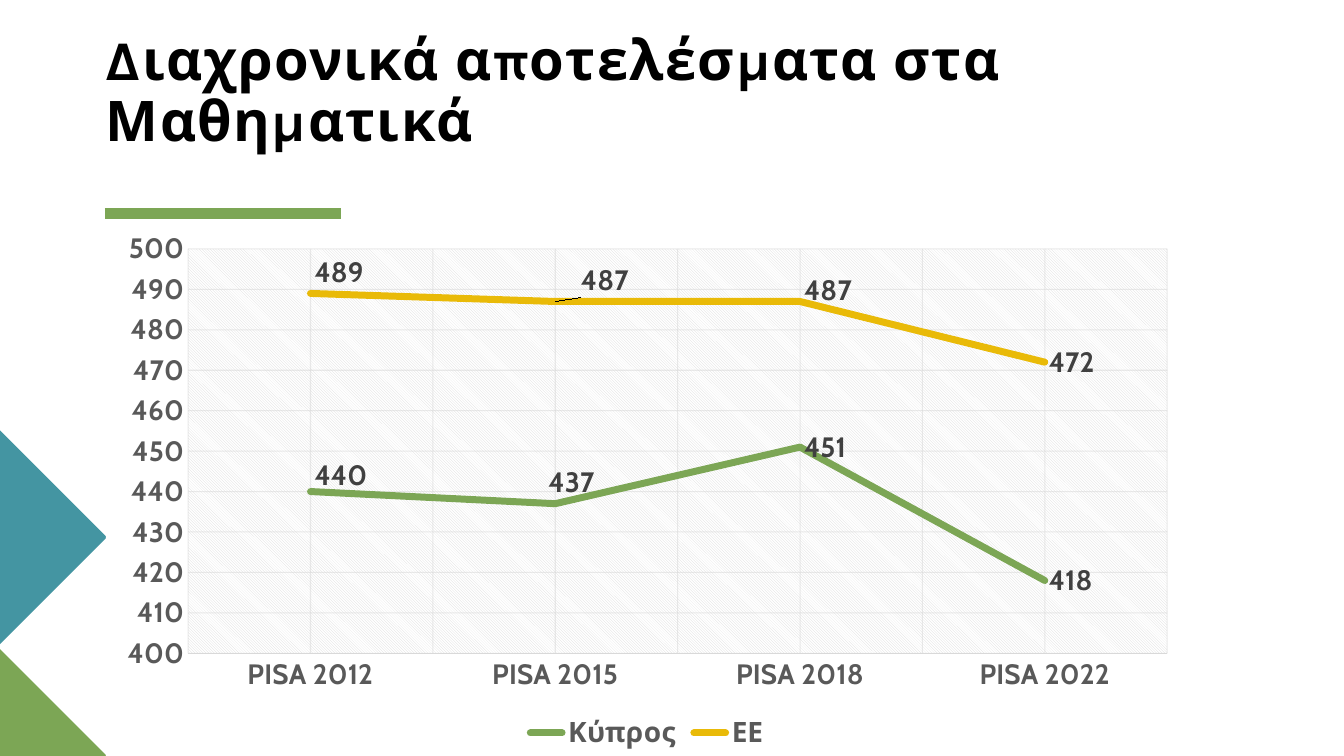
from copy import deepcopy
from dataclasses import dataclass, field

from lxml import etree
from pptx import Presentation
from pptx.chart.data import CategoryChartData
from pptx.dml.color import RGBColor
from pptx.enum.chart import XL_CHART_TYPE, XL_LABEL_POSITION, XL_LEGEND_POSITION, XL_TICK_MARK
from pptx.enum.shapes import MSO_CONNECTOR
from pptx.enum.text import MSO_ANCHOR
from pptx.oxml import parse_xml
from pptx.oxml.ns import nsdecls, qn
from pptx.util import Inches, Pt

GREEN = RGBColor(0x7C, 0xA6, 0x55)
TEAL = RGBColor(0x44, 0x95, 0xA2)
YELLOW = RGBColor(0xE9, 0xBA, 0x08)
BLACK = RGBColor(0, 0, 0)
WHITE = RGBColor(255, 255, 255)
LABEL_GRAY = RGBColor(0x40, 0x40, 0x40)
AXIS_GRAY = RGBColor(0x59, 0x59, 0x59)
GRID_GRAY = RGBColor(0xD9, 0xD9, 0xD9)
WIDTH, HEIGHT = Inches(13.33), Inches(7.5)


@dataclass
class Triangle:
    color: RGBColor
    points: list[tuple[float, float]]


@dataclass
class ScoreLine:
    name: str
    values: list[int]
    color: RGBColor
    # Label shifts by point, as shares of the chart's size
    shifts: dict[int, tuple[float, float]] = field(default_factory=dict)


YEARS = [2012, 2015, 2018, 2022]
SCORES = [
    ScoreLine("Κύπρος", [440, 437, 451, 418], GREEN,
              {0: (0, -0.03), 1: (-0.01, -0.04)}),
    ScoreLine("ΕΕ", [489, 487, 487, 472], YELLOW,
              {0: (0, -0.04), 1: (0.02, -0.04), 2: (0, -0.02)}),
]
# Corners as percentages of the slide's width and height
TRIANGLES = [
    Triangle(GREEN, [(7.95, 100), (0, 100), (0, 85.87)]),
    Triangle(TEAL, [(0, 56.93), (7.95, 71.07), (0, 85.2)]),
]


def x(percent: float) -> int:
    return round(WIDTH * percent / 100)


def y(percent: float) -> int:
    return round(HEIGHT * percent / 100)


def style_font(font, color: RGBColor, size: int = 20, name: str = "Cabin") -> None:
    font.size, font.bold, font.name = Pt(size), True, name
    font.color.rgb = color


def style_line(line, color: RGBColor, width: float) -> None:
    line.color.rgb = color
    line.width = Pt(width)


def draw_triangle(s, triangle: Triangle) -> None:
    first, *rest = [(x(px), y(py)) for px, py in triangle.points]
    builder = s.shapes.build_freeform(*first)
    builder.add_line_segments(rest, close=True)
    sp = builder.convert_to_shape()
    sp.shadow.inherit = False
    sp.fill.solid()
    sp.fill.fore_color.rgb = triangle.color
    sp.line.fill.background()


def draw_title(s, text: str) -> None:
    tf = s.shapes.add_textbox(x(7.88), y(11.33), x(85.6), y(8.93)).text_frame
    tf.word_wrap = True
    tf.vertical_anchor = MSO_ANCHOR.BOTTOM
    tf.margin_left = tf.margin_right = tf.margin_top = tf.margin_bottom = 0
    tf.text = text
    p = tf.paragraphs[0]
    p.line_spacing = 0.9
    r = p.runs[0]
    style_font(r.font, BLACK, 40, "Karla")
    r._r.get_or_add_rPr().set("spc", "100")


def layout_xml(**parts: str | float):
    items = "".join(f'<c:{tag} val="{val}"/>' for tag, val in parts.items())
    return parse_xml(f'<c:layout {nsdecls("c")}><c:manualLayout>{items}'
                     '</c:manualLayout></c:layout>')


def style_axis(axis) -> None:
    axis.major_tick_mark = axis.minor_tick_mark = XL_TICK_MARK.NONE
    style_font(axis.tick_labels.font, AXIS_GRAY)
    axis.has_major_gridlines = True
    style_line(axis.major_gridlines.format.line, GRID_GRAY, 0.75)
    for clr in axis._element.xpath("./c:majorGridlines//a:srgbClr"):
        etree.SubElement(clr, qn("a:alpha")).set("val", "54000")


def add_minor_gridlines(axis) -> None:
    axis.has_minor_gridlines = True
    major, minor = (axis._element.find(qn(f"c:{kind}Gridlines")) for kind in ("major", "minor"))
    minor.append(deepcopy(major.find(qn("c:spPr"))))


def style_series(series, score: ScoreLine) -> None:
    series.smooth = False
    style_line(series.format.line, score.color, 5)
    series._element.find(qn("c:spPr")).find(qn("a:ln")).set("cap", "rnd")
    labels = series.data_labels
    labels.show_value = True
    labels.number_format, labels.number_format_is_linked = "0", False
    labels.position = XL_LABEL_POSITION.RIGHT
    style_font(labels.font, LABEL_GRAY)
    for i, (dx, dy) in score.shifts.items():
        label = series.points[i].data_label
        label.position = XL_LABEL_POSITION.RIGHT
        style_font(label.font, LABEL_GRAY)
        idx = series._element.xpath(f'.//c:dLbl/c:idx[@val="{i}"]')[0]
        idx.addnext(layout_xml(x=dx, y=dy))


def draw_chart(s) -> None:
    data = CategoryChartData(number_format="0")
    data.categories = [f"PISA {year}" for year in YEARS]
    for score in SCORES:
        data.add_series(score.name, score.values)
    chart = s.shapes.add_chart(XL_CHART_TYPE.LINE, x(7.88), y(29.33), x(80.5), y(70.67), data).chart
    chart.has_title = False
    style_font(chart.font, AXIS_GRAY)
    chart.has_legend = True
    chart.legend.position = XL_LEGEND_POSITION.BOTTOM
    chart.legend.include_in_layout = False
    style_font(chart.legend.font, AXIS_GRAY)

    # Axes
    cat, val = chart.category_axis, chart.value_axis
    style_axis(cat)
    add_minor_gridlines(cat)
    style_line(cat.format.line, GRID_GRAY, 0.75)
    style_axis(val)
    val.format.line.fill.background()
    val.minimum_scale, val.maximum_scale, val.major_unit = 400, 500, 10
    val.tick_labels.number_format, val.tick_labels.number_format_is_linked = "0", False

    # Series
    chart.plots[0].vary_by_categories = False
    for series, score in zip(chart.plots[0].series, SCORES):
        style_series(series, score)

    # Plot area placement and hatching, white chart background
    area = chart._chartSpace.chart.plotArea
    for old in area.findall(qn("c:layout")):
        area.remove(old)
    area.insert(0, layout_xml(layoutTarget="inner", xMode="edge", yMode="edge",
                              x=7.6 / 100, y=5.1 / 100, w=90.5 / 100, h=75.7 / 100))
    area.append(parse_xml(
        f'<c:spPr {nsdecls("c", "a")}><a:pattFill prst="ltDnDiag">'
        f'<a:fgClr><a:srgbClr val="{GRID_GRAY}"/></a:fgClr>'
        f'<a:bgClr><a:srgbClr val="{WHITE}"/></a:bgClr></a:pattFill></c:spPr>'))
    chart._chartSpace.chart.addnext(parse_xml(
        f'<c:spPr {nsdecls("c", "a")}><a:solidFill><a:srgbClr val="{WHITE}"/></a:solidFill>'
        '<a:ln><a:noFill/></a:ln></c:spPr>'))


def main() -> None:
    prs = Presentation()
    prs.slide_width, prs.slide_height = WIDTH, HEIGHT
    s = prs.slides.add_slide(prs.slide_layouts[6])

    # Corner triangles
    for triangle in TRIANGLES:
        draw_triangle(s, triangle)

    # Title and its rule
    rule = s.shapes.add_connector(MSO_CONNECTOR.STRAIGHT, x(7.8), y(28.27), x(25.36), y(28.27))
    style_line(rule.line, GREEN, 8)
    etree.SubElement(rule._element.spPr, qn("a:effectLst"))
    draw_title(s, "Διαχρονικά αποτελέσματα στα Μαθηματικά")

    draw_chart(s)
    prs.save("out.pptx")


if __name__ == "__main__":
    main()
